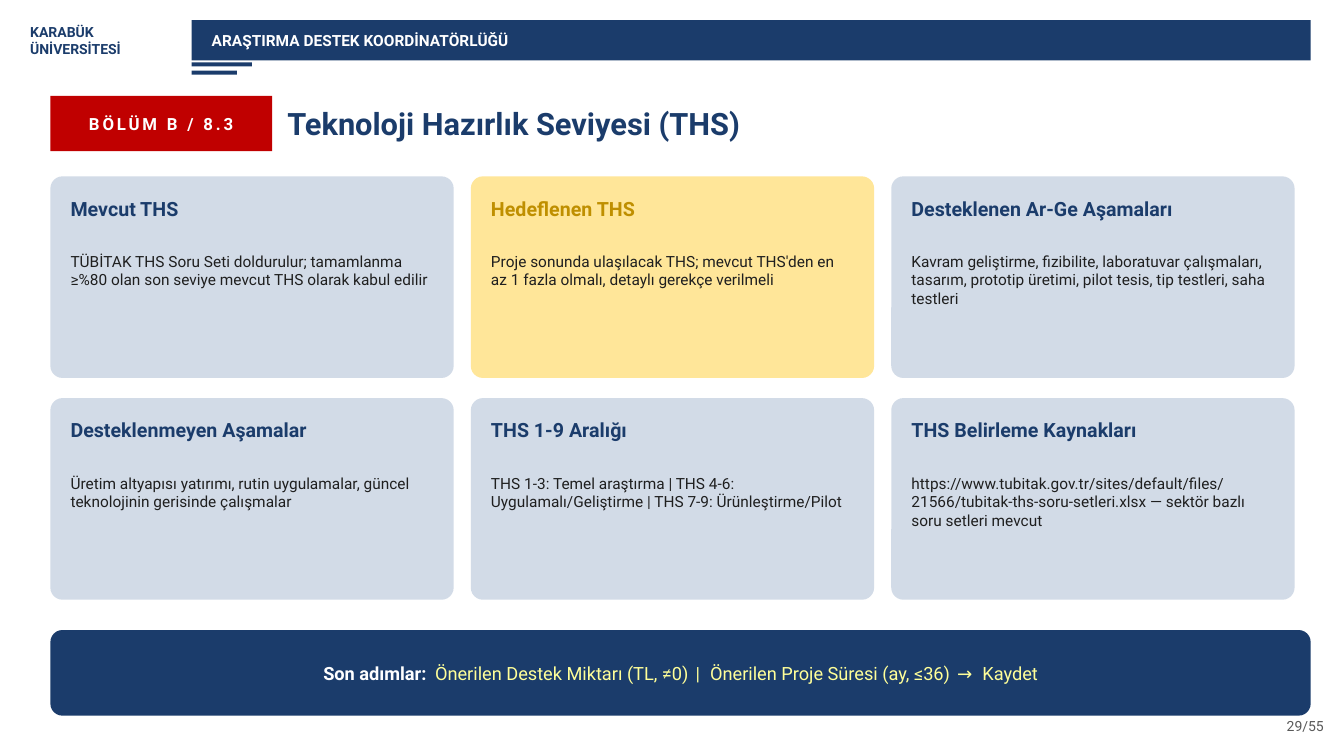
from pptx import Presentation
from pptx import util as u
from pptx.dml.color import RGBColor
from pptx.enum import shapes, text

CELL = u.Inches(0.1)
COLUMNS, ROWS = 133.3, 75
FONT = "Roboto"
CORNER = 1.2
COLORS = {
    "navy": "1B3C6B",
    "red": "C00000",
    "mist": "D2DBE7",
    "sand": "FFE699",
    "gold": "BF8F00",
    "lemon": "FFFF99",
    "ink": "1F1F1F",
    "gray": "595959",
    "white": "FFFFFF",
}
CARDS = [
    ("Mevcut THS",
     "TÜBİTAK THS Soru Seti doldurulur; tamamlanma ≥%80 olan son seviye mevcut THS olarak kabul edilir"),
    ("Hedeflenen THS",
     "Proje sonunda ulaşılacak THS; mevcut THS'den en az 1 fazla olmalı, detaylı gerekçe verilmeli"),
    ("Desteklenen Ar-Ge Aşamaları",
     "Kavram geliştirme, fizibilite, laboratuvar çalışmaları, tasarım, prototip üretimi, pilot tesis, "
     "tip testleri, saha testleri"),
    ("Desteklenmeyen Aşamalar",
     "Üretim altyapısı yatırımı, rutin uygulamalar, güncel teknolojinin gerisinde çalışmalar"),
    ("THS 1-9 Aralığı",
     "THS 1-3: Temel araştırma | THS 4-6: Uygulamalı/Geliştirme | THS 7-9: Ürünleştirme/Pilot"),
    ("THS Belirleme Kaynakları",
     "https://www.tubitak.gov.tr/sites/default/files/21566/tubitak-ths-soru-setleri.xlsx — "
     "sektör bazlı soru setleri mevcut"),
]
HIGHLIGHTED_CARD = 1
CARD_COLUMNS = 3
CARD_LEFT, CARD_TOP = 5, 17.5
CARD_WIDTH, CARD_HEIGHT = 40, 20
CARD_STEP_X, CARD_STEP_Y = 41.7, 22
CARD_PADDING = 2
FINAL_STEPS = [
    ("Son adımlar:", "white", True, 0),
    (" ", "white", True, 3),
    ("Önerilen Destek Miktarı (TL, ≠0)", "lemon", False, 0),
    (" | ", "lemon", False, 2),
    ("Önerilen Proje Süresi (ay, ≤36)", "lemon", False, 0),
    (" → ", "lemon", False, 2),
    ("Kaydet", "lemon", False, 0),
]


def cells(*counts):
    return [round(count * CELL) for count in counts]


def rgb(name):
    return RGBColor.from_string(COLORS[name])


def style_run(run, size, color, bold=False, spacing=0):
    run.font.name = FONT
    run.font.size = u.Pt(size)
    run.font.bold = bold
    run.font.color.rgb = rgb(color)
    if spacing:
        run.font._element.set("spc", str(spacing * 100))


def add_block(slide, frame, color, rounded=False):
    kind = shapes.MSO_SHAPE.ROUNDED_RECTANGLE if rounded else shapes.MSO_SHAPE.RECTANGLE
    block = slide.shapes.add_shape(kind, *cells(*frame))
    block.shadow.inherit = False
    block.fill.solid()
    block.fill.fore_color.rgb = rgb(color)
    block.line.fill.background()
    if rounded:
        block.adjustments[0] = round(CORNER / min(frame[2:]), 3)


def add_text_frame(slide, frame, anchor=text.MSO_ANCHOR.MIDDLE):
    text_frame = slide.shapes.add_textbox(*cells(*frame)).text_frame
    text_frame.word_wrap = True
    text_frame.vertical_anchor = anchor
    text_frame.margin_left = text_frame.margin_right = 0
    text_frame.margin_top = text_frame.margin_bottom = 0
    return text_frame


def add_label(slide, frame, wording, size, color, bold=False, spacing=0,
              align=text.PP_ALIGN.LEFT, anchor=text.MSO_ANCHOR.MIDDLE):
    text_frame = add_text_frame(slide, frame, anchor)
    text_frame.text = wording
    for paragraph in text_frame.paragraphs:
        paragraph.alignment = align
        for run in paragraph.runs:
            style_run(run, size, color, bold, spacing)


def add_header(slide):
    add_label(slide, (3, 1.5, 15, 5), "KARABÜK\nÜNİVERSİTESİ", 10, "navy", bold=True)
    add_block(slide, (19, 2, 111, 4), "navy")
    add_label(slide, (21, 2, 109, 4), "ARAŞTIRMA DESTEK KOORDİNATÖRLÜĞÜ", 11, "white", bold=True)
    for top, width in ((6.2, 6), (7, 4.5)):
        add_block(slide, (19, top, width, 0.4), "navy")


def add_title(slide):
    badge = (5, 9.5, 22, 5.5)
    add_block(slide, badge, "red")
    add_label(slide, badge, "BÖLÜM B / 8.3", 12, "white", bold=True, spacing=2,
              align=text.PP_ALIGN.CENTER)
    add_label(slide, (28.5, 9.5, 100, 5.5), "Teknoloji Hazırlık Seviyesi (THS)", 22, "navy", bold=True)


def add_card(slide, index, heading, body):
    row, column = divmod(index, CARD_COLUMNS)
    left = CARD_LEFT + column * CARD_STEP_X
    top = CARD_TOP + row * CARD_STEP_Y
    fill, heading_color = ("sand", "gold") if index == HIGHLIGHTED_CARD else ("mist", "navy")
    inner_left, inner_width = left + CARD_PADDING, CARD_WIDTH - 2 * CARD_PADDING
    add_block(slide, (left, top, CARD_WIDTH, CARD_HEIGHT), fill, rounded=True)
    add_label(slide, (inner_left, top + CARD_PADDING, inner_width, 5), heading, 14, heading_color,
              bold=True, anchor=text.MSO_ANCHOR.TOP)
    add_label(slide, (inner_left, top + 7.5, inner_width, 11.5), body, 11, "ink",
              anchor=text.MSO_ANCHOR.TOP)


def add_final_steps(slide):
    banner = (5, 62.5, 125, 8.5)
    add_block(slide, banner, "navy", rounded=True)
    paragraph = add_text_frame(slide, banner).paragraphs[0]
    paragraph.alignment = text.PP_ALIGN.CENTER
    for wording, color, bold, spacing in FINAL_STEPS:
        run = paragraph.add_run()
        run.text = wording
        style_run(run, 13, color, bold, spacing)


def main():
    presentation = Presentation()
    presentation.slide_width, presentation.slide_height = cells(COLUMNS, ROWS)
    slide = presentation.slides.add_slide(presentation.slide_layouts[6])
    add_header(slide)
    add_label(slide, (121.3, 70.5, 10, 3), "29/55", 10, "gray", align=text.PP_ALIGN.RIGHT)
    add_title(slide)
    for index, (heading, body) in enumerate(CARDS):
        add_card(slide, index, heading, body)
    add_final_steps(slide)
    presentation.save("out.pptx")


if __name__ == "__main__":
    main()
